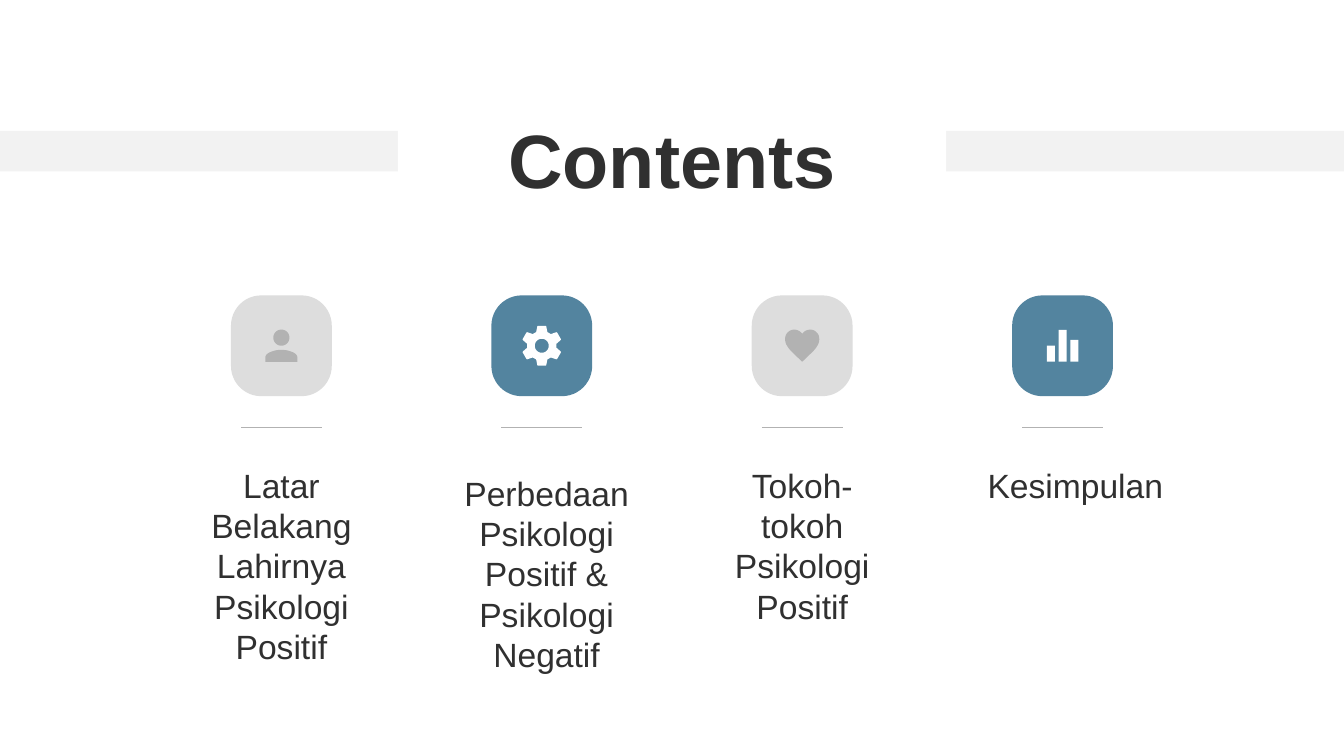
from dataclasses import dataclass
from math import cos, pi, sin
from typing import Optional

from lxml import etree
from pptx import Presentation
from pptx.dml.color import RGBColor
from pptx.enum import shapes, text
from pptx.oxml import ns
from pptx.util import Pt

Point = tuple[float, float]
Outline = list[Point]


@dataclass(frozen=True)
class Theme:
    font: str = "Arial"
    ink: str = "303030"
    white: str = "FFFFFF"
    band: str = "F2F2F2"
    blue: str = "53849F"
    grey: str = "DDDDDD"
    muted: str = "B2B2B2"
    title_size: float = 54
    label_size: float = 24
    leading: float = 1.2


@dataclass(frozen=True)
class Topic:
    label: str
    icon: list[Outline]
    highlighted: bool
    label_offset: float = -34
    label_top: float = 328.3
    label_width: float = 140
    label_height: float = 152.6


THEME = Theme()
TILE = 72
TILE_TOP = 211
FIRST_TILE = 165
TILE_PITCH = 186
RULE_INSET = 7.2
RULE_TOP = 305.3
CURVE_STEPS = 8


def circle(x: float, y: float, radius: float, steps: int = 48) -> Outline:
    angles = [2 * pi * step / steps for step in range(steps)]
    return [(x + radius * cos(angle), y + radius * sin(angle)) for angle in angles]


def curve(points: Outline) -> Outline:
    result = [points[0]]
    for first in range(0, len(points) - 1, 3):
        a, b, c, d = points[first:first + 4]
        for step in range(1, CURVE_STEPS + 1):
            t = step / CURVE_STEPS
            s = 1 - t
            weights = (s**3, 3 * s * s * t, 3 * s * t * t, t**3)
            result.append((
                sum(w * p[0] for w, p in zip(weights, (a, b, c, d))),
                sum(w * p[1] for w, p in zip(weights, (a, b, c, d))),
            ))
    return result


def mirrored(right_half: Outline) -> Outline:
    return right_half + [(-x, y) for x, y in reversed(right_half)]


def person() -> list[Outline]:
    shoulder = curve([(0, 2.9), (2.3, 2.9), (5, 3.3), (7.3, 4.3),
                      (10, 5.2), (11.5, 6.8), (11.5, 8.6)])
    return [mirrored(shoulder + [(11.5, 11.5)]), circle(0, -5.8, 5.76)]


def gear() -> list[Outline]:
    tooth = [(-4, -9.8), (-3.2, -13.8), (-2.8, -14.2),
             (2.8, -14.2), (3.2, -13.8), (4, -9.8)]
    angles = [index * pi / 3 for index in range(6)]
    rim = [(x * cos(angle) - y * sin(angle), x * sin(angle) + y * cos(angle))
           for angle in angles for x, y in tooth]
    return [rim, circle(0, 0, 5)]


def heart() -> list[Outline]:
    half = curve([(0, -8.6), (1.6, -10.6), (3.6, -11.5), (5.8, -11.5),
                  (7.6, -11.5), (9, -10.9), (10.2, -9.6),
                  (11.6, -8.4), (12.2, -6.8), (12.2, -4.8),
                  (12.2, -3), (11.7, -1.4), (10.8, 0),
                  (9.9, 1.6), (8.6, 3.1), (7.3, 4.4),
                  (6, 5.7), (3.5, 8.1), (0, 11.4)])
    return [mirrored(half)]


def bars() -> list[Outline]:
    half, bottom = 2.9, 11.4
    return [[(x - half, top), (x + half, top), (x + half, bottom), (x - half, bottom)]
            for x, top in ((-8.4, 0), (0, -11.4), (8.4, -4.2))]


TOPICS = [
    Topic("Latar Belakang Lahirnya Psikologi Positif", person(), False),
    Topic("Perbedaan Psikologi Positif & Psikologi Negatif", gear(), True,
          label_offset=-30.6, label_top=334),
    Topic("Tokoh-tokoh Psikologi Positif", heart(), False),
    Topic("Kesimpulan", bars(), True,
          label_offset=-33, label_width=156.2, label_height=36),
]


def paint(shape, color: str) -> None:
    shape.shadow.inherit = False
    shape.fill.solid()
    shape.fill.fore_color.rgb = RGBColor.from_string(color)
    shape.line.fill.background()


def add_tile(page, kind, left: float, top: float, width: float, height: float,
             color: str, rounding: Optional[float] = None):
    tile = page.shapes.add_shape(kind, Pt(left), Pt(top), Pt(width), Pt(height))
    if rounding is not None:
        tile.adjustments[0] = rounding
    paint(tile, color)
    return tile


def write(box, content: str, *, size: float, bold: bool = False,
          anchor=text.MSO_ANCHOR.TOP, bottom_inset: float = 3.6) -> None:
    frame = box.text_frame
    frame.word_wrap = True
    frame.vertical_anchor = anchor
    frame.margin_bottom = Pt(bottom_inset)
    para = frame.paragraphs[0]
    para.alignment = text.PP_ALIGN.CENTER
    para.line_spacing = Pt(size * THEME.leading)
    span = para.add_run()
    span.text = content
    span.font.name = THEME.font
    span.font.size = Pt(size)
    span.font.bold = bold
    span.font.color.rgb = RGBColor.from_string(THEME.ink)


def add_icon(page, outlines: list[Outline], x: float, y: float, color: str) -> None:
    grid = [[(round(px * 100), round(py * 100)) for px, py in outline]
            for outline in outlines]
    builder = page.shapes.build_freeform(*grid[0][0], scale=Pt(1) / 100)
    for index, outline in enumerate(grid):
        if index:
            builder.move_to(*outline[0])
        builder.add_line_segments(outline[1:], close=True)
    paint(builder.convert_to_shape(Pt(x), Pt(y)), color)


def add_rule(page, left: float, right: float, top: float) -> None:
    rule = page.shapes.add_connector(shapes.MSO_CONNECTOR.STRAIGHT,
                                     Pt(left), Pt(top), Pt(right), Pt(top))
    rule.line.color.rgb = RGBColor.from_string(THEME.muted)
    rule.line.width = Pt(0.5)
    etree.SubElement(rule._element.spPr, ns.qn("a:effectLst"))


def add_topic(page, topic: Topic, left: float) -> None:
    add_tile(page, shapes.MSO_SHAPE.ROUNDED_RECTANGLE, left, TILE_TOP, TILE, TILE,
             THEME.blue if topic.highlighted else THEME.grey, rounding=0.3)
    add_icon(page, topic.icon, left + TILE / 2, TILE_TOP + TILE / 2,
             THEME.white if topic.highlighted else THEME.muted)
    add_rule(page, left + RULE_INSET, left + TILE - RULE_INSET, RULE_TOP)
    box = page.shapes.add_textbox(Pt(left + topic.label_offset), Pt(topic.label_top),
                                  Pt(topic.label_width), Pt(topic.label_height))
    write(box, topic.label, size=THEME.label_size)


def main() -> None:
    deck = Presentation()
    deck.slide_width, deck.slide_height = Pt(960), Pt(540)
    page = deck.slides.add_slide(deck.slide_layouts[6])
    rectangle = shapes.MSO_SHAPE.RECTANGLE
    add_tile(page, rectangle, 0, 93.4, 960, 29, THEME.band)
    title = add_tile(page, rectangle, 284.2, 74.9, 391.6, 72.7, THEME.white)
    write(title, "Contents", size=THEME.title_size, bold=True,
          anchor=text.MSO_ANCHOR.BOTTOM, bottom_inset=1.8)
    for index, topic in enumerate(TOPICS):
        add_topic(page, topic, FIRST_TILE + index * TILE_PITCH)
    deck.save("out.pptx")


if __name__ == "__main__":
    main()
